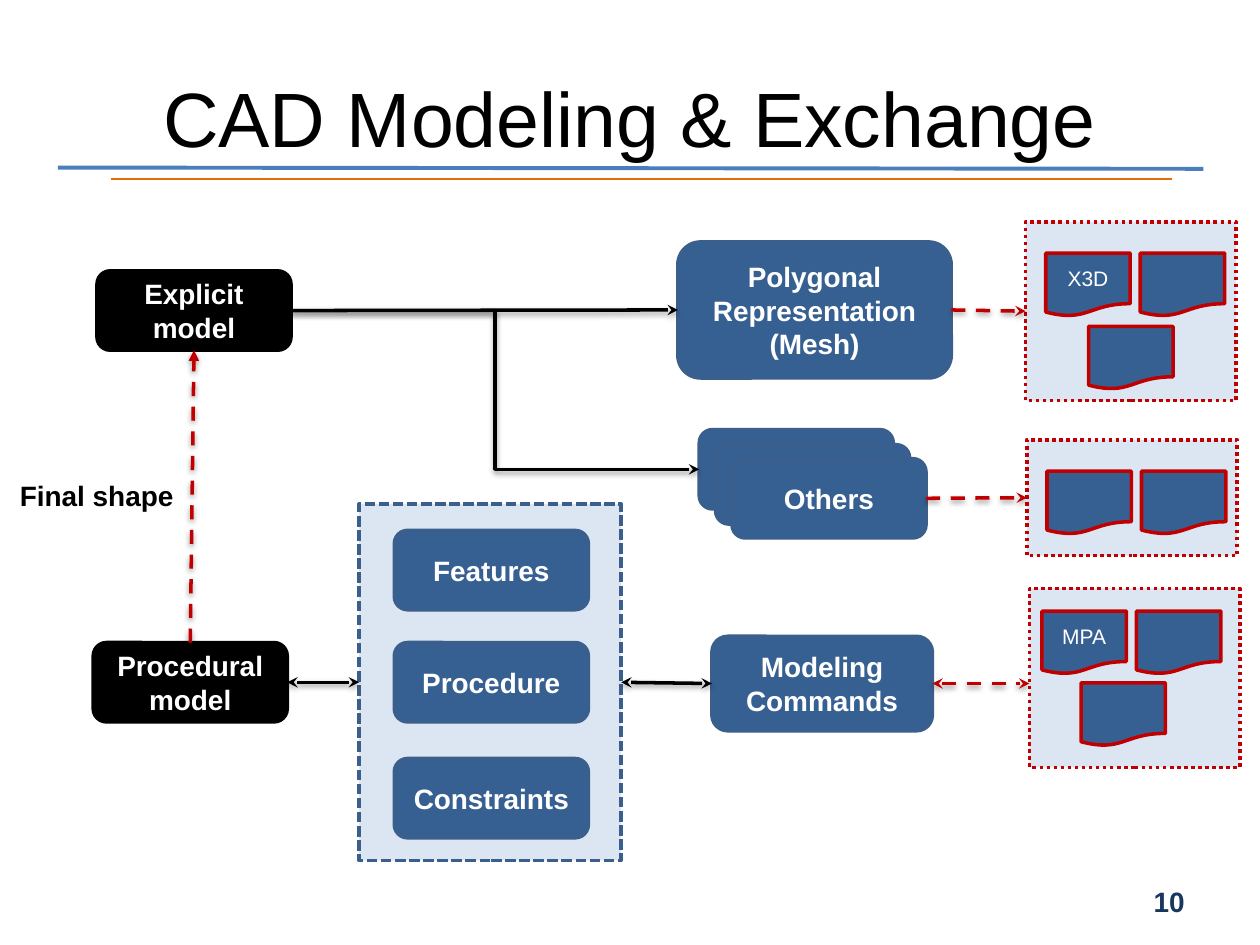
from dataclasses import dataclass

from lxml import etree
from pptx import Presentation
from pptx.dml.color import RGBColor
from pptx.enum.dml import MSO_LINE
from pptx.enum.shapes import MSO_CONNECTOR, MSO_SHAPE
from pptx.enum.text import MSO_ANCHOR, PP_ALIGN
from pptx.oxml.ns import qn
from pptx.util import Inches, Pt

ROUNDED, RECTANGLE = MSO_SHAPE.ROUNDED_RECTANGLE, MSO_SHAPE.RECTANGLE
DOCUMENT = MSO_SHAPE.FLOWCHART_DOCUMENT
STRAIGHT, ELBOW = MSO_CONNECTOR.STRAIGHT, MSO_CONNECTOR.ELBOW
DASH, DOTTED, SHORT_DASH = MSO_LINE.DASH, MSO_LINE.ROUND_DOT, MSO_LINE.SQUARE_DOT
LEFT, CENTER, RIGHT = PP_ALIGN.LEFT, PP_ALIGN.CENTER, PP_ALIGN.RIGHT
MIDDLE = MSO_ANCHOR.MIDDLE
TOP_SIDE, LEFT_SIDE, BOTTOM_SIDE, RIGHT_SIDE = range(4)


@dataclass(frozen=True)
class Theme:
    font: str = "Arial"
    black: str = "000000"
    white: str = "FFFFFF"
    blue: str = "376092"
    blue_edge: str = "3A5F8C"
    pale: str = "DCE6F2"
    red: str = "C00000"
    navy: str = "17375E"
    rule_blue: str = "4B7EBC"
    rule_orange: str = "E46C0A"
    title_size: int = 44
    label_size: int = 16
    small_size: int = 12
    line_width: int = 2


class Diagram:
    def __init__(self, page, theme):
        self.page = page
        self.theme = theme

    def add_text(self, frame, text, size, color, bold=True, align=CENTER):
        para = frame.paragraphs[0]
        para.alignment = align
        span = para.add_run()
        span.text = text
        span.font.name = self.theme.font
        span.font.size = Pt(size)
        span.font.bold = bold
        span.font.color.rgb = RGBColor.from_string(color)

    def title(self, text):
        box = self.page.shapes.title
        box.left, box.top = Inches(0.5), Inches(0.3)
        box.width, box.height = Inches(9), Inches(1.25)
        box.text_frame.vertical_anchor = MIDDLE
        self.add_text(box.text_frame, text, self.theme.title_size, self.theme.black, False)

    def label(self, text, area, color, align=LEFT, wrap=True):
        box = self.page.shapes.add_textbox(*map(Inches, area))
        box.text_frame.word_wrap = wrap
        box.text_frame.vertical_anchor = MIDDLE
        self.add_text(box.text_frame, text, self.theme.label_size, color, align=align)

    def shape(self, kind, area, fill, edge, text="", dash=None, small=False):
        shape = self.page.shapes.add_shape(kind, *map(Inches, area))
        shape.shadow.inherit = False
        shape.fill.solid()
        shape.fill.fore_color.rgb = RGBColor.from_string(fill)
        self.outline(shape.line, edge, self.theme.line_width, dash)
        if text:
            frame = shape.text_frame
            frame.word_wrap = True
            frame.vertical_anchor = MIDDLE
            size = self.theme.small_size if small else self.theme.label_size
            self.add_text(frame, text, size, self.theme.white, not small)
        return shape

    def node(self, area, text=""):
        return self.shape(ROUNDED, area, self.theme.blue, self.theme.blue_edge, text)

    def model(self, area, text):
        return self.shape(ROUNDED, area, self.theme.black, self.theme.black, text)

    def file_panel(self, area, documents):
        """Draw a dotted panel with documents given as (label, x offset, y offset)."""
        theme = self.theme
        panel = self.shape(RECTANGLE, area, theme.pale, theme.red, dash=DOTTED)
        for text, dx, dy in documents:
            spot = (area[0] + dx, area[1] + dy, 0.67, 0.5)
            self.shape(DOCUMENT, spot, theme.blue, theme.red, text, small=True)
        return panel

    def outline(self, line, color, width, dash=None):
        line.color.rgb = RGBColor.from_string(color)
        line.width = Pt(width)
        if dash is not None:
            line.dash_style = dash

    def rule(self, start, end, color, width):
        rule = self.page.shapes.add_connector(STRAIGHT, *map(Inches, start + end))
        self.outline(rule.line, color, width)
        etree.SubElement(rule._element.spPr, qn("a:effectLst"))

    def arrow(self, start, end, color, kind=STRAIGHT, dash=None, head=None, tail="stealth"):
        """Lead from a (shape, side) pair to another, or level to the x position end."""
        arrow = self.page.shapes.add_connector(kind, 0, 0, 0, 0)
        arrow.begin_connect(*start)
        if isinstance(end, tuple):
            arrow.end_connect(*end)
        else:
            arrow.end_x, arrow.end_y = Inches(end), arrow.begin_y
        self.outline(arrow.line, color, self.theme.line_width, dash)
        properties = arrow._element.spPr
        line = properties.find(qn("a:ln"))
        for tag, mark in (("a:headEnd", head), ("a:tailEnd", tail)):
            if mark:
                etree.SubElement(line, qn(tag), type=mark)
        effects = etree.SubElement(properties, qn("a:effectLst"))
        shadow = etree.SubElement(effects, qn("a:outerShdw"), blurRad="40000",
                                  dist="20000", dir="5400000", rotWithShape="0")
        shade = etree.SubElement(shadow, qn("a:srgbClr"), val=self.theme.black)
        etree.SubElement(shade, qn("a:alpha"), val="38000")


def main():
    deck = Presentation()
    deck.slide_width, deck.slide_height = Inches(10), Inches(7.5)
    theme = Theme()
    diagram = Diagram(deck.slides.add_slide(deck.slide_layouts[5]), theme)
    node_size = (1.54, 0.63)

    diagram.rule((0.46, 1.33), (9.55, 1.34), theme.rule_blue, 2.25)
    diagram.rule((0.88, 1.42), (9.3, 1.42), theme.rule_orange, 1.25)
    diagram.title("CAD Modeling & Exchange")

    explicit = diagram.model((0.77, 2.15, *node_size), "Explicit model")
    procedural = diagram.model((0.74, 5.1, *node_size), "Procedural model")
    diagram.label("Final shape", (0.06, 3.75, 1.44, 0.37), theme.black, wrap=False)

    mesh = diagram.node((5.38, 1.92, 2.17, 1.08), "Polygonal Representation (Mesh)")
    stack = [diagram.node((x, y, *node_size), text)
             for x, y, text in ((5.55, 3.41, ""), (5.68, 3.53, ""), (5.81, 3.64, "Others"))]
    commands = diagram.node((5.65, 5.05, 1.75, 0.75), "Modeling Commands")

    steps = diagram.shape(RECTANGLE, (2.85, 4, 2.08, 2.83), theme.pale,
                          theme.blue_edge, dash=SHORT_DASH)
    for y, text in ((4.21, "Features"), (5.1, "Procedure"), (6.02, "Constraints")):
        diagram.node((3.13, y, *node_size), text)

    mesh_files = diagram.file_panel(
        (8.14, 1.76, 1.67, 1.42),
        (("X3D", 0.16, 0.25), ("", 0.91, 0.25), ("", 0.5, 0.83)))
    other_files = diagram.file_panel(
        (8.15, 3.49, 1.67, 0.92), (("", 0.16, 0.25), ("", 0.91, 0.25)))
    command_files_left = 8.17
    diagram.file_panel(
        (command_files_left, 4.67, 1.67, 1.42),
        (("MPA", 0.1, 0.18), ("", 0.85, 0.18), ("", 0.41, 0.75)))

    explicit_exit = (explicit, RIGHT_SIDE)
    diagram.arrow(explicit_exit, (mesh, LEFT_SIDE), theme.black)
    diagram.arrow(explicit_exit, (stack[0], LEFT_SIDE), theme.black, ELBOW)
    diagram.arrow((procedural, TOP_SIDE), (explicit, BOTTOM_SIDE), theme.red,
                  dash=DASH, tail="triangle")
    for source, target in ((procedural, steps), (steps, commands)):
        diagram.arrow((source, RIGHT_SIDE), (target, LEFT_SIDE), theme.black, head="stealth")
    for source, target in ((mesh, mesh_files), (stack[-1], other_files)):
        diagram.arrow((source, RIGHT_SIDE), (target, LEFT_SIDE), theme.red, dash=DASH)
    diagram.arrow((commands, RIGHT_SIDE), command_files_left, theme.red,
                  dash=DASH, head="stealth")

    diagram.label("10", (7.17, 6.95, 2.33, 0.4), theme.navy, RIGHT)
    deck.save("out.pptx")


if __name__ == "__main__":
    main()
